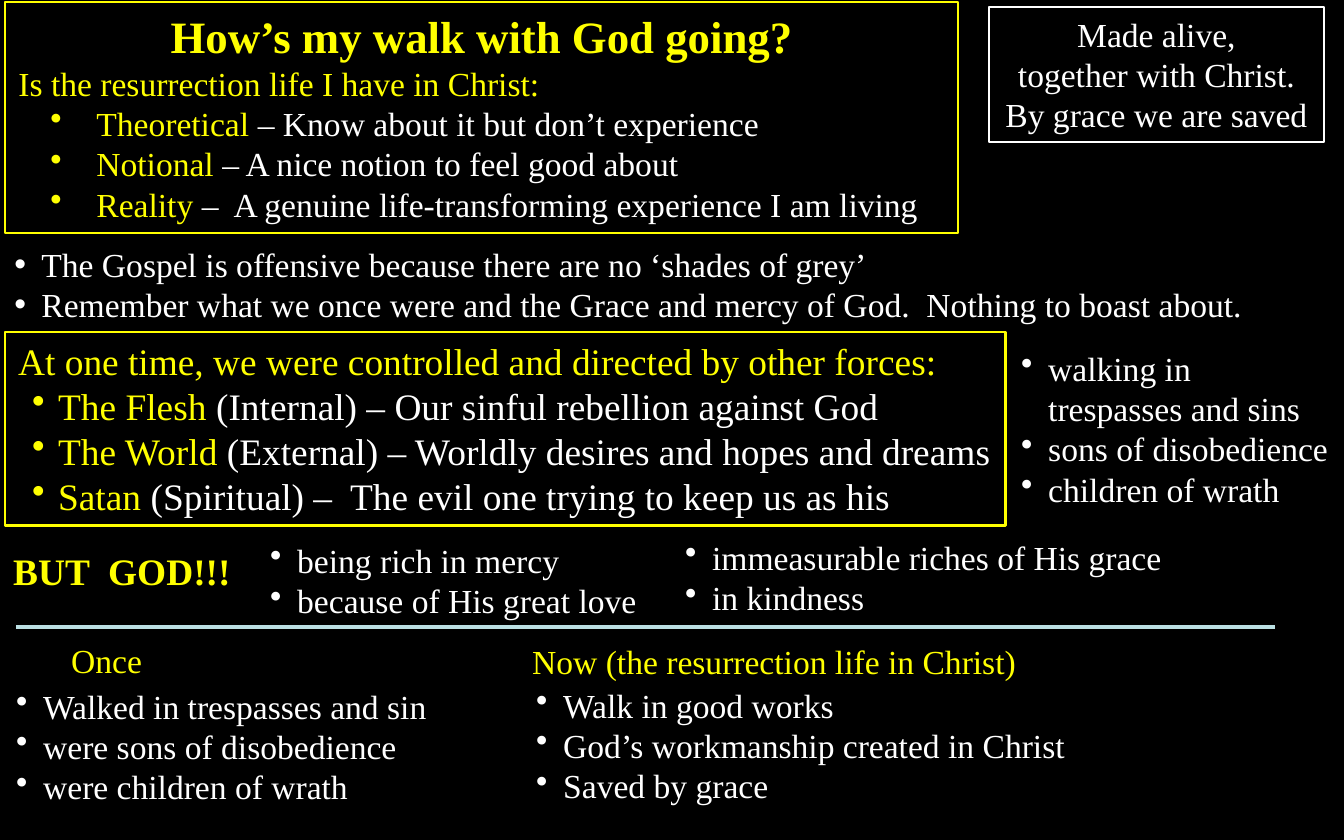
from lxml import etree
from pptx import Presentation
from pptx.dml.color import RGBColor
from pptx.enum.shapes import MSO_CONNECTOR, MSO_SHAPE
from pptx.enum.text import MSO_ANCHOR, MSO_AUTO_SIZE, PP_ALIGN
from pptx.oxml.ns import qn
from pptx.util import Emu, Pt

RECTANGLE = MSO_SHAPE.RECTANGLE
STRAIGHT = MSO_CONNECTOR.STRAIGHT
TOP = MSO_ANCHOR.TOP
NO_FIT = MSO_AUTO_SIZE.NONE
LEFT, CENTER = PP_ALIGN.LEFT, PP_ALIGN.CENTER

BLACK = RGBColor(0x00, 0x00, 0x00)
WHITE = RGBColor(0xFF, 0xFF, 0xFF)
YELLOW = RGBColor(0xFF, 0xFF, 0x00)
PALE_BLUE = RGBColor(0xBB, 0xE0, 0xE3)
FONT = "Times New Roman"
PLAIN, LIST, FORCES, WALK = (0, 0), (27, 27), (40, 26), (78, 46)


def px(length):
    return Emu(round(length * 9144000 / 1344))


def write(box, lines, color=WHITE, size=18, indent=PLAIN, align=LEFT, bold=False):
    frame = box.text_frame
    frame.word_wrap = True
    frame.auto_size = NO_FIT
    frame.vertical_anchor = TOP
    for line in lines:
        para = frame.paragraphs[0] if not frame.text else frame.add_paragraph()
        margin, hanging = indent
        properties = para._p.get_or_add_pPr()
        properties.set("marL", str(px(margin)))
        properties.set("indent", str(-px(hanging)))
        if hanging:
            etree.SubElement(properties, qn("a:buChar")).set("char", "•")
        para.alignment = align
        para.space_before = Pt(0)
        para.font.name = FONT
        para.font.size = Pt(size)
        para.font.bold = bold
        para.font.color.rgb = color
        if isinstance(line, str):
            para.text = line
        else:
            for text, span_color in zip(line, (YELLOW, WHITE)):
                span = para.add_run()
                span.text = text
                span.font.color.rgb = span_color


deck = Presentation()
deck.slide_width, deck.slide_height = px(1344), px(840)
page = deck.slides.add_slide(deck.slide_layouts[1])
page.background.fill.solid()
page.background.fill.fore_color.rgb = BLACK

walk = page.shapes.title
walk.left, walk.top, walk.width, walk.height = px(5), px(2), px(953), px(231)
walk.line.color.rgb = YELLOW
walk.line.width = Pt(1.5)
write(walk, ["How’s my walk with God going?"], YELLOW, 24, align=CENTER, bold=True)
write(walk, ["Is the resurrection life I have in Christ:"], YELLOW)
write(walk, [
    ("Theoretical ", "– Know about it but don’t experience"),
    ("Notional ", "– A nice notion to feel good about"),
    ("Reality ", "–  A genuine life-transforming experience I am living"),
], YELLOW, indent=WALK)

gospel = page.placeholders[1]
gospel.left, gospel.top, gospel.width, gospel.height = px(1), px(237), px(1343), px(95)
write(gospel, [
    "The Gospel is offensive because there are no ‘shades of grey’",
    "Remember what we once were and the Grace and mercy of God.  Nothing to boast about.",
], indent=LIST)

frames = []
for left, top, width, height, color, weight in [
    (989, 7, 335, 135, WHITE, 0.75),
    (5, 332, 1001, 194, YELLOW, 1.5),
]:
    box = page.shapes.add_shape(RECTANGLE, px(left), px(top), px(width), px(height))
    box.shadow.inherit = False
    box.fill.solid()
    box.fill.fore_color.rgb = BLACK
    box.line.color.rgb = color
    box.line.width = Pt(weight)
    frames.append(box)
grace, forces = frames
write(grace, ["Made alive,\vtogether with Christ.", "By grace we are saved"], align=CENTER)
write(forces, ["At one time, we were controlled and directed by other forces:"], YELLOW, 20)
write(forces, [
    ("The Flesh ", "(Internal) – Our sinful rebellion against God"),
    ("The World ", "(External) – Worldly desires and hopes and dreams"),
    ("Satan ", "(Spiritual) –  The evil one trying to keep us as his"),
], YELLOW, 20, FORCES)

for left, top, width, height, lines in [
    (1008, 341, 335, 176,
     ["walking in trespasses and sins", "sons of disobedience", "children of wrath"]),
    (257, 533, 415, 95, ["being rich in mercy", "because of His great love"]),
    (672, 530, 532, 95, ["immeasurable riches of His grace", "in kindness"]),
    (3, 679, 478, 136,
     ["Walked in trespasses and sin", "were sons of disobedience", "were children of wrath"]),
    (523, 678, 626, 136,
     ["Walk in good works", "God’s workmanship created in Christ", "Saved by grace"]),
]:
    box = page.shapes.add_textbox(px(left), px(top), px(width), px(height))
    write(box, lines, indent=LIST)

for left, top, width, height, text, size, bold in [
    (0, 542, 259, 59, "BUT  GOD!!!", 20, True),
    (58, 633, 106, 54, "Once", 18, False),
    (519, 634, 825, 54, "Now (the resurrection life in Christ)", 18, False),
]:
    box = page.shapes.add_textbox(px(left), px(top), px(width), px(height))
    write(box, [text], YELLOW, size, bold=bold)

divider = page.shapes.add_connector(STRAIGHT, px(16), px(627), px(1275), px(627))
divider.line.color.rgb = PALE_BLUE
divider.line.width = Pt(2)
etree.SubElement(divider._element.spPr, qn("a:effectLst"))

deck.save("out.pptx")
